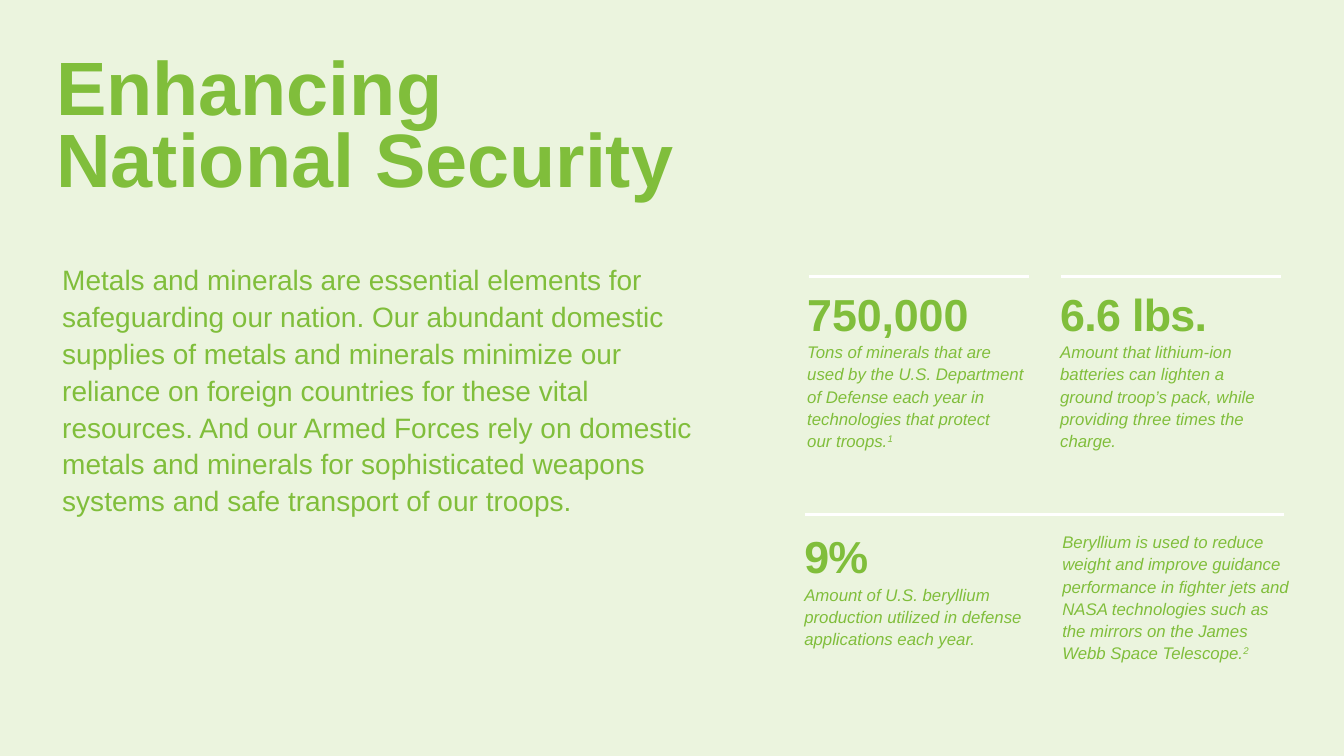
from pptx import Presentation
from pptx.dml.color import RGBColor
from pptx.enum.shapes import MSO_CONNECTOR, MSO_SHAPE
from pptx.enum.text import MSO_AUTO_SIZE
from pptx.oxml.ns import qn
from pptx.util import Pt
from lxml.etree import SubElement

GREEN = RGBColor(0x80, 0xBE, 0x3B)
PALE_GREEN = RGBColor(0xEB, 0xF4, 0xDE)
WHITE = RGBColor(0xFF, 0xFF, 0xFF)

deck = Presentation()
deck.slide_width, deck.slide_height = Pt(960), Pt(540)
slide = deck.slides.add_slide(deck.slide_layouts[6])


def add_text(left, top, width, height):
    box = slide.shapes.add_textbox(Pt(left), Pt(top), Pt(width), Pt(height))
    frame = box.text_frame
    frame.word_wrap = True
    frame.auto_size = MSO_AUTO_SIZE.SHAPE_TO_FIT_TEXT
    return frame


def style(paragraph, size, bold=False, italic=False, spacing=None):
    paragraph.line_spacing = spacing
    for run in paragraph.runs:
        font = run.font
        font.name, font.size = "Arial", Pt(size)
        font.bold, font.italic = bold, italic
        font.color.rgb = GREEN


backdrop = slide.shapes.add_shape(MSO_SHAPE.RECTANGLE, 0, 0, deck.slide_width, deck.slide_height)
backdrop.shadow.inherit = False
backdrop.fill.solid()
backdrop.fill.fore_color.rgb = PALE_GREEN
backdrop.line.fill.background()

title = add_text(33.1, 37.4, 480.2, 114.5)
title.text = "Enhancing National Security"
style(title.paragraphs[0], 54, bold=True, spacing=0.8)

summary = add_text(37.4, 181.4, 472.3, 193.7)
summary.text = (
    "Metals and minerals are essential elements for safeguarding our nation. "
    "Our abundant domestic supplies of metals and minerals minimize our reliance "
    "on foreign countries for these vital resources. And our Armed Forces rely on "
    "domestic metals and minerals for sophisticated weapons systems and safe "
    "transport of our troops."
)
style(summary.paragraphs[0], 20, spacing=1.1)

for start, end, y in [
    (758.2, 915.1, 197.3),
    (578.2, 735.1, 197.3),
    (760.3, 917.3, 367.2),
    (575.3, 774, 367.2),
]:
    rule = slide.shapes.add_connector(MSO_CONNECTOR.STRAIGHT, Pt(start), Pt(y), Pt(end), Pt(y))
    rule.line.color.rgb = WHITE
    rule.line.width = Pt(2.25)
    SubElement(rule._element.spPr, qn("a:effectLst"))

facts = [
    ((569.5, 200.9, 174.2, 126), "750,000", -10,
     "Tons of minerals that are used by the U.S. Department of Defense each year "
     "in technologies that protect\vour troops.", "1"),
    ((750.2, 200.9, 169.2, 126), "6.6 lbs.", -50,
     "Amount that lithium-ion batteries can lighten a ground troop’s pack, "
     "while providing three times the charge.", None),
    ((751.7, 375.1, 176.4, 103), None, 0,
     "Beryllium is used to reduce weight and improve guidance performance in "
     "fighter jets and NASA technologies such as the mirrors on the James Webb "
     "Space Telescope.", "2"),
    ((567.4, 374.4, 172.1, 92.9), "9%", -50,
     "Amount of U.S. beryllium production utilized in defense applications each year.", None),
]
for place, figure, tracking, detail, footnote in facts:
    fact = add_text(*place)
    caption = fact.paragraphs[0]
    if figure:
        headline = fact.paragraphs[0]
        headline.text = figure
        style(headline, 32, bold=True)
        headline.runs[0].font._element.set("spc", str(tracking))
        caption = fact.add_paragraph()
    caption.text = detail
    if footnote:
        marker = caption.add_run()
        marker.text = footnote
        marker.font._element.set("baseline", "30000")
    style(caption, 12, italic=True, spacing=1.1)

deck.save("out.pptx")
